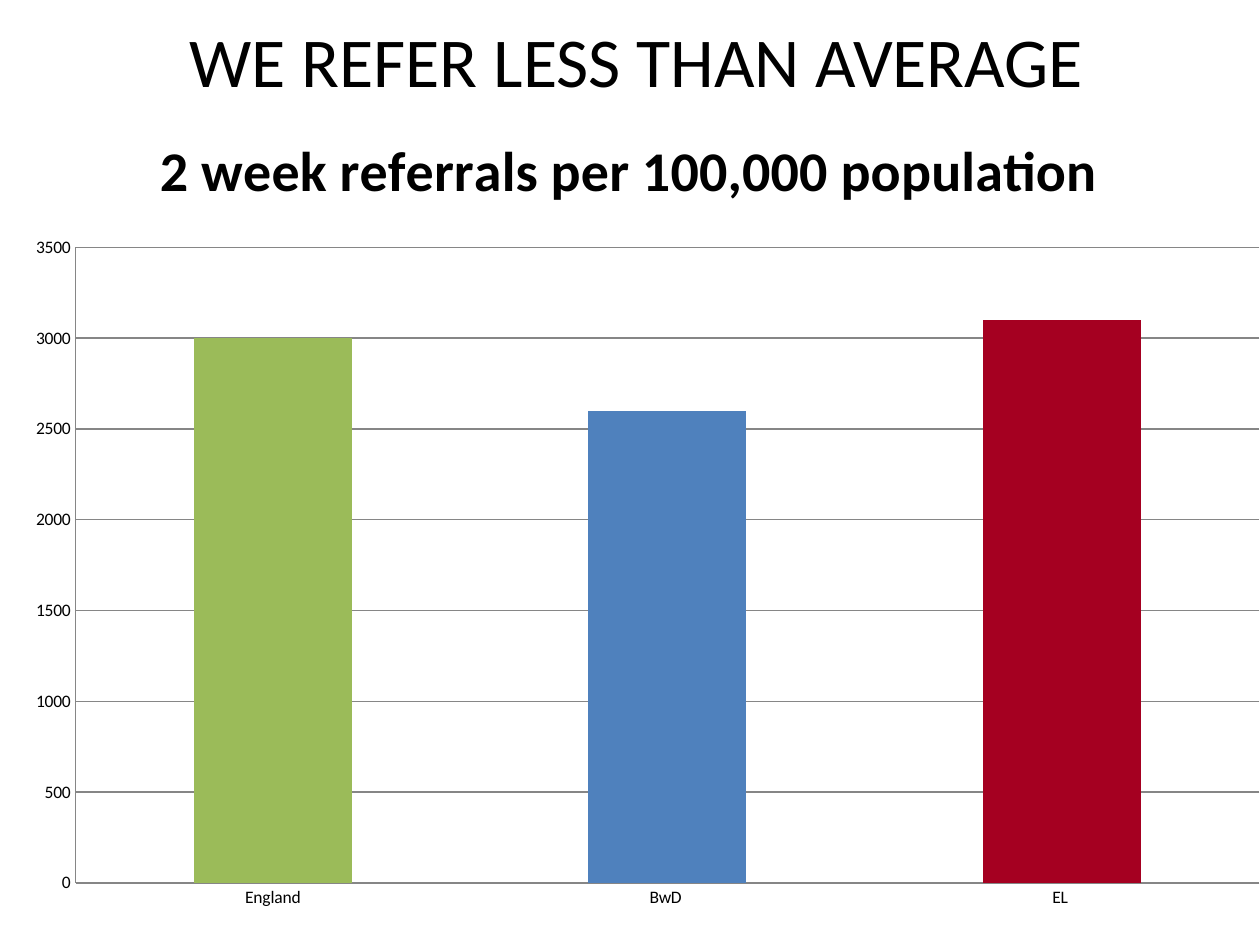
from dataclasses import dataclass

from lxml import etree
from pptx import Presentation
from pptx.chart.data import CategoryChartData
from pptx.dml.color import RGBColor
from pptx.enum.chart import XL_CHART_TYPE, XL_TICK_MARK
from pptx.enum.text import MSO_ANCHOR, PP_ALIGN
from pptx.oxml.ns import qn
from pptx.util import Pt

COLUMN_CLUSTERED = XL_CHART_TYPE.COLUMN_CLUSTERED
NO_TICK = XL_TICK_MARK.NONE
MIDDLE = MSO_ANCHOR.MIDDLE
CENTER = PP_ALIGN.CENTER
TITLE_ONLY_LAYOUT = 5


@dataclass(frozen=True)
class Theme:
    font: str = "Calibri"
    text: RGBColor = RGBColor(0, 0, 0)
    grid: RGBColor = RGBColor(0x86, 0x86, 0x86)
    title_size: int = 40
    chart_title_size: int = 32
    label_size: int = 10


@dataclass(frozen=True)
class Area:
    name: str
    referrals: int
    color: RGBColor


THEME = Theme()
AREAS = [
    Area("England", 3000, RGBColor(0x9B, 0xBB, 0x59)),
    Area("BwD ", 2600, RGBColor(0x4F, 0x81, 0xBD)),
    Area("EL ", 3100, RGBColor(0xA5, 0x00, 0x21)),
]


def add_run(paragraph, text: str, size: int, bold: bool = False) -> None:
    run = paragraph.add_run()
    run.text = text
    run.font.name = THEME.font
    run.font.size = Pt(size)
    run.font.bold = bold
    run.font.color.rgb = THEME.text


def manual_layout(**settings):
    """Build a chart layout from its settings, in schema order."""
    layout = etree.Element(qn("c:layout"))
    manual = etree.SubElement(layout, qn("c:manualLayout"))
    for tag, value in settings.items():
        etree.SubElement(manual, qn(f"c:{tag}")).set("val", str(value))
    return layout


def replace_layout(parent, layout, position: int) -> None:
    for old in parent.findall(qn("c:layout")):
        parent.remove(old)
    parent.insert(position, layout)


def style_line(line) -> None:
    line.color.rgb = THEME.grid
    line.width = Pt(0.75)


def style_axis(axis) -> None:
    axis.major_tick_mark = NO_TICK
    axis.minor_tick_mark = NO_TICK
    style_line(axis.format.line)


def add_title(slide, text: str) -> None:
    title = slide.shapes.title
    title.left, title.top, title.width, title.height = Pt(39.6), Pt(0), Pt(648), Pt(67.7)
    title.text_frame.vertical_anchor = MIDDLE
    paragraph = title.text_frame.paragraphs[0]
    paragraph.alignment = CENTER
    add_run(paragraph, text, THEME.title_size)


def add_referral_chart(slide, title: str, areas: list[Area]) -> None:
    data = CategoryChartData()
    data.categories = [area.name for area in areas]
    data.add_series("Series 1", [area.referrals for area in areas])
    chart = slide.shapes.add_chart(
        COLUMN_CLUSTERED, Pt(0), Pt(62), Pt(720), Pt(478), data
    ).chart
    chart.has_legend = False
    chart.font.name = THEME.font
    chart.font.size = Pt(THEME.label_size)
    chart.font.color.rgb = THEME.text

    # Chart title
    chart.has_title = True
    add_run(chart.chart_title.text_frame.paragraphs[0], title, THEME.chart_title_size, True)
    title_layout = manual_layout(xMode="edge", yMode="edge", x=0.119, y=0.015)
    replace_layout(chart.chart_title._element, title_layout, 1)

    # Axes and gridlines
    style_axis(chart.category_axis)
    value_axis = chart.value_axis
    style_axis(value_axis)
    value_axis.minimum_scale, value_axis.maximum_scale = 0, 3500
    value_axis.major_unit = 500
    value_axis.has_major_gridlines = True
    style_line(value_axis.major_gridlines.format.line)

    # Plot area and columns
    plot = chart.plots[0]
    plot.gap_width = 150
    plot.vary_by_categories = False
    plot_layout = manual_layout(
        layoutTarget="inner", xMode="edge", yMode="edge", x=0.06, y=0.166, w=0.94, h=0.76
    )
    replace_layout(chart._chartSpace.chart.plotArea, plot_layout, 0)
    for index, area in enumerate(areas):
        fill = plot.series[0].points[index].format.fill
        fill.solid()
        fill.fore_color.rgb = area.color


def main() -> None:
    presentation = Presentation()
    presentation.slide_width, presentation.slide_height = Pt(720), Pt(540)
    slide = presentation.slides.add_slide(presentation.slide_layouts[TITLE_ONLY_LAYOUT])
    add_referral_chart(slide, "2 week referrals per 100,000 population", AREAS)
    add_title(slide, "WE REFER LESS THAN AVERAGE")
    presentation.save("out.pptx")


if __name__ == "__main__":
    main()
